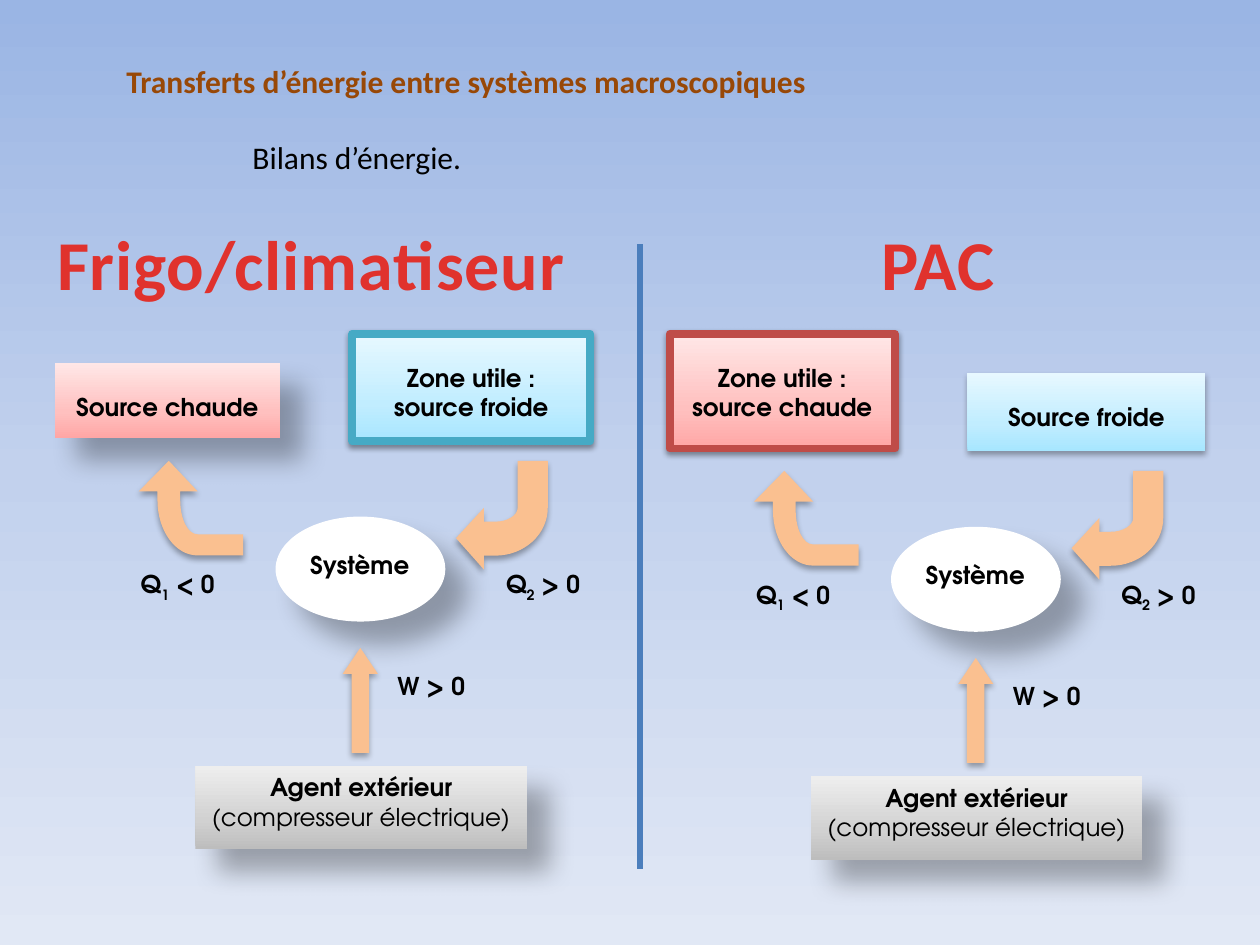
import copy
from dataclasses import dataclass
from typing import Any

import pptx
import pptx.dml.color
import pptx.enum.shapes
import pptx.enum.text
import pptx.oxml
import pptx.util

Pt = pptx.util.Pt
SHAPE = pptx.enum.shapes.MSO_SHAPE
ALIGN = pptx.enum.text.PP_ALIGN
NS = 'xmlns:a="http://schemas.openxmlformats.org/drawingml/2006/main"'

COLORS = {
    "black": "000000", "white": "FFFFFF", "brown": "984807", "title": "E0322D",
    "arrow": "FAC090", "divider": "4B7EBC", "cold_edge": "46AAC5", "hot_edge": "BF4C48",
}
GRADIENTS = {
    "sky": ((0, "9AB5E4"), (0.5, "C2D1ED"), (1, "E1E8F5")),
    "hot": ((0, "FFA6A5"), (0.35, "FFC0BF"), (1, "FFE7E7")),
    "cold": ((0, "A7E6FF"), (0.35, "C1EDFF"), (1, "E7F8FF")),
    "grey": ((0, "BDBDBD"), (0.35, "D1D1D1"), (1, "EEEEEE")),
}
# opacity %, blur pt, distance pt, direction in degrees
SHADOWS = {"deep": (30, 15, 18, 45), "soft": (32, 3.5, 2.2, 90), "edge": (38, 3.1, 1.6, 90)}
LABEL = {"name": "TeX Gyre Adventor", "size": Pt(14), "bold": True}
HEADING = {"name": "Calibri", "size": Pt(18), "bold": True}
TITLE = {"name": "Calibri", "size": Pt(40), "bold": True}
NO_INSET = {"margin_left": 0, "margin_top": 0, "margin_right": 0, "margin_bottom": 0}
SOURCE_INSET = {"margin_top": Pt(16.6), "margin_bottom": 0}

# Each segment is one point (line) or three points (cubic curve).
HEAT_ARROWS = (
    (((260.6, 307.5),), ((276.5, 325.4),), ((276.5, 317.5),), ((283, 317.5),),
     ((299.6, 317.5), (313, 305.3), (313, 290.2)), ((313, 263.3),), ((295.8, 263.3),),
     ((295.8, 290.2),), ((295.8, 294.5), (290, 298.1), (283, 298.1)),
     ((276.5, 298.1),), ((276.5, 290.2),)),
    (((96.5, 263.3),), ((79.3, 280.8),), ((90, 280.8),), ((90, 285.8),),
     ((90, 303.1), (100.1, 317.4), (113, 317.4)), ((139, 317.4),), ((139, 305.3),),
     ((113, 305.3),), ((107.3, 305.3), (103, 296.6), (103, 285.8)),
     ((103, 280.8),), ((113, 280.8),)),
)


@dataclass(frozen=True)
class Run:
    text: str
    bold: bool = True
    baseline: int = 0


@dataclass(frozen=True)
class Source:
    text: str
    box: tuple[float, float, float, float]
    fill: str
    shadow: str
    edge: str = ""


@dataclass(frozen=True)
class Panel:
    dx: float
    dy: float
    sources: tuple[Source, ...]


LABELS = (
    ((284.4, 325.4, 52, 20), (Run("Q"), Run("2", baseline=-25000), Run(" > 0"))),
    ((75.6, 325.4, 52, 15), (Run("Q"), Run("1", baseline=-25000), Run(" < 0"))),
    ((220.5, 383.6, 52, 17), (Run("W > 0"),)),
)
PANELS = (
    Panel(0, 0, (
        Source("Source chaude", (31.3, 207.4, 128.7, 42.8), "hot", "deep"),
        Source("Zone utile : source froide", (201.3, 190.8, 136, 61.3), "cold", "edge", "cold_edge"))),
    Panel(351.7, 5.8, (
        Source("Zone utile : source chaude", (382.7, 190.8, 128.7, 65.5), "hot", "edge", "hot_edge"),
        Source("Source froide", (552.8, 213.1, 136, 44.6), "cold", "soft"))),
)


def rgb(name: str) -> pptx.dml.color.RGBColor:
    return pptx.dml.color.RGBColor.from_string(COLORS[name])


def set_format(obj: Any, values: dict) -> None:
    for key, value in values.items():
        setattr(obj, key, value)


def apply_gradient(fill: Any, root: Any, name: str, angle: float) -> None:
    """Give fill three stops; root is the element that holds the fill."""
    fill.gradient()
    fill.gradient_angle = angle
    stops = root.xpath(".//a:gsLst")[0]
    stops.append(copy.deepcopy(stops[-1]))
    for stop, (position, color) in zip(fill.gradient_stops, GRADIENTS[name]):
        stop.position = position
        stop.color.rgb = pptx.dml.color.RGBColor.from_string(color)


def style(sp: Any, fill: str, shadow: str = "", edge: str = "") -> None:
    if fill in GRADIENTS:
        apply_gradient(sp.fill, sp._element, fill, 90)
    else:
        sp.fill.solid()
        sp.fill.fore_color.rgb = rgb(fill)
    if edge:
        sp.line.color.rgb = rgb(edge)
        sp.line.width = Pt(4.5)
    else:
        sp.line.fill.background()
    sp.shadow.inherit = False
    if shadow:
        alpha, blur, dist, angle = SHADOWS[shadow]
        sp._element.spPr.find(pptx.oxml.ns.qn("a:effectLst")).append(pptx.oxml.parse_xml(
            f'<a:outerShdw {NS} blurRad="{Pt(blur)}" dist="{Pt(dist)}" dir="{angle * 60000}" '
            f'rotWithShape="0"><a:srgbClr val="000000"><a:alpha val="{alpha * 1000}"/>'
            f'</a:srgbClr></a:outerShdw>'))


def add_run(p: Any, run: Run, font: dict, color: str) -> Any:
    r = p.add_run()
    r.text = run.text
    set_format(r.font, {**font, "bold": run.bold})
    r.font.color.rgb = rgb(color)
    if run.baseline:
        r._r.get_or_add_rPr().set("baseline", str(run.baseline))
    return r


def add_tab_stop(p: Any, position: float) -> None:
    p._p.get_or_add_pPr().append(pptx.oxml.parse_xml(
        f'<a:tabLst {NS}><a:tab pos="{Pt(position)}" algn="l"/></a:tabLst>'))


def write(sp: Any, runs: tuple[Run, ...], frame: dict) -> None:
    tf = sp.text_frame
    set_format(tf, {"word_wrap": True, "vertical_anchor": pptx.enum.text.MSO_ANCHOR.TOP, **frame})
    p = tf.paragraphs[0]
    p.alignment = ALIGN.CENTER
    for run in runs:
        add_run(p, run, LABEL, "black")


def add_heat_arrow(s: Any, segments: tuple, dx: float, dy: float) -> None:
    """Draw a bent arrow: an outline through the segment ends, then its curves."""
    emu = [[(Pt(x + dx), Pt(y + dy)) for x, y in seg] for seg in segments]
    ends = [seg[-1] for seg in emu]
    builder = s.shapes.build_freeform(*ends[0], scale=1.0)
    builder.add_line_segments(ends[1:], close=True)
    sp = builder.convert_to_shape()
    for seg, line in zip(emu[1:], sp._element.xpath(".//a:lnTo")):
        if len(seg) == 3:
            points = "".join(f'<a:pt x="{x - sp.left}" y="{y - sp.top}"/>' for x, y in seg)
            line.getparent().replace(line, pptx.oxml.parse_xml(
                f"<a:cubicBezTo {NS}>{points}</a:cubicBezTo>"))
    style(sp, "arrow", "soft")


def draw_panel(s: Any, panel: Panel) -> None:
    def place(x: float, y: float, w: float, h: float) -> tuple:
        return Pt(x + panel.dx), Pt(y + panel.dy), Pt(w), Pt(h)

    for source in panel.sources:
        sp = s.shapes.add_shape(SHAPE.RECTANGLE, *map(Pt, source.box))
        style(sp, source.fill, source.shadow, source.edge)
        write(sp, (Run(source.text),), SOURCE_INSET)

    style(s.shapes.add_shape(SHAPE.OVAL, *place(157.5, 295.2, 97, 60)), "white", "deep")
    system = s.shapes.add_shape(SHAPE.RECTANGLE, *place(172.1, 314.2, 67, 15))
    style(system, "white")
    write(system, (Run("Système"),), NO_INSET)

    for segments in HEAT_ARROWS:
        add_heat_arrow(s, segments, panel.dx, panel.dy)
    work = s.shapes.add_shape(SHAPE.UP_ARROW, *place(195.9, 370.2, 20, 60))
    work.adjustments[1] = 0.74
    style(work, "arrow", "soft")

    for box, runs in LABELS:
        write(s.shapes.add_textbox(*place(*box)), runs, NO_INSET)

    agent = s.shapes.add_shape(SHAPE.RECTANGLE, *place(111.7, 437.9, 189.4, 47.5))
    style(agent, "grey", "deep")
    write(agent, (Run("Agent extérieur "), Run("(compresseur électrique)", bold=False)), {})


def draw_headings(s: Any) -> None:
    tf = s.shapes.add_textbox(Pt(65.2), Pt(31.7), Pt(584), Pt(72.7)).text_frame
    tf.word_wrap = True
    add_run(tf.paragraphs[0], Run("Transferts d’énergie entre systèmes macroscopiques"), HEADING, "brown")
    p = tf.add_paragraph()
    p.space_before = Pt(22)
    add_tab_stop(p, 72)
    add_run(p, Run("\tBilans d’énergie.", bold=False), HEADING, "black")

    tf = s.shapes.add_textbox(Pt(25.5), Pt(122.4), Pt(669), Pt(55.4)).text_frame
    tf.word_wrap = True
    p = tf.paragraphs[0]
    add_tab_stop(p, 471)
    r = add_run(p, Run("Frigo/climatiseur\tPAC"), TITLE, "title")
    r._r.get_or_add_rPr().set("spc", "50")


def main() -> None:
    prs = pptx.Presentation()
    prs.slide_width, prs.slide_height = Pt(720), Pt(540)
    s = prs.slides.add_slide(prs.slide_layouts[6])
    apply_gradient(s.background.fill, s._element, "sky", 270)

    draw_headings(s)
    for panel in PANELS:
        draw_panel(s, panel)
    divider = s.shapes.add_connector(pptx.enum.shapes.MSO_CONNECTOR.STRAIGHT,
                                     Pt(365.8), Pt(139.7), Pt(365.8), Pt(496.8))
    divider.line.color.rgb = rgb("divider")
    divider.line.width = Pt(3)
    divider._element.spPr.append(pptx.oxml.parse_xml(f"<a:effectLst {NS}/>"))
    prs.save("out.pptx")


if __name__ == "__main__":
    main()
